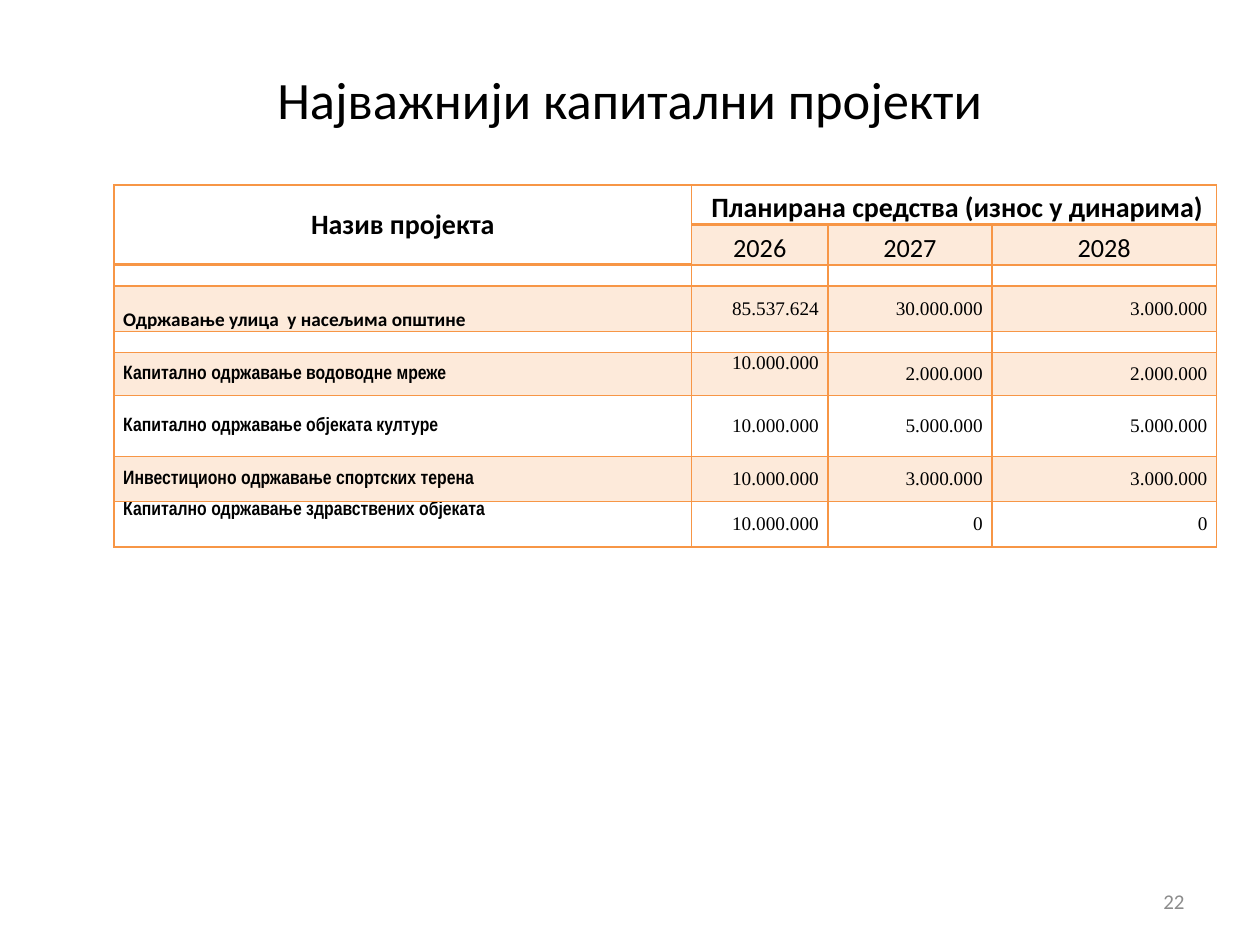
import pptx
import pptx.util
import pptx.dml.color
import pptx.enum.text
import lxml.etree
import pptx.oxml.ns

Pt = pptx.util.Pt
ALIGN = pptx.enum.text.PP_ALIGN
ANCHOR = pptx.enum.text.MSO_ANCHOR
qn = pptx.oxml.ns.qn

# Content
TITLE = "Најважнији капитални пројекти"
PAGE = "22"
HEADING = "Назив пројекта"
GROUP = " Планирана средства (износ у динарима)"
YEARS = ["2026", "2027", "2028"]
ROWS = [
    [HEADING, GROUP],
    [""] + YEARS,
    [],
    ["Одржавање улица  у насељима општине", "85.537.624", "30.000.000", "3.000.000"],
    [],
    ["Капитално одржавање водоводне мреже", "10.000.000", "2.000.000", "2.000.000"],
    ["Капитално одржавање објеката културе", "10.000.000", "5.000.000", "5.000.000"],
    ["Инвестиционо одржавање спортских терена", "10.000.000", "3.000.000", "3.000.000"],
    ["Капитално одржавање здравствених објеката", "10.000.000", "0", "0"],
]

# Layout and formats
COLS = [330, 78, 93.6, 128.4]
HEIGHTS = [22.9, 22.9, 12, 26.2, 12, 24.6, 34.8, 25.8, 25.8]
COLORS = {"text": "000000", "accent": "F79646", "page": "8C8C8C"}
SHADED = {(1, 1), (1, 2), (1, 3)} | {(r, c) for r in (3, 5, 7) for c in range(4)}
ANCHORS = {(0, 1): ANCHOR.BOTTOM, (3, 0): ANCHOR.BOTTOM,
           (5, 1): ANCHOR.TOP, (8, 0): ANCHOR.TOP}
ANCHORS.update({(1, c): ANCHOR.BOTTOM for c in (1, 2, 3)})
HEAD = {"size": Pt(16), "name": "Calibri", "bold": True}
YEAR = {"size": Pt(15), "name": "Calibri", "bold": False}
STREET = {"size": Pt(11), "name": "Calibri", "bold": True}
NAME = {"size": Pt(11), "name": "Arial Narrow", "bold": True}
AMOUNT = {"size": Pt(11), "name": "Times New Roman", "bold": False}


def write(tf, text, font, align, color="text"):
    p = tf.paragraphs[0]
    p.alignment = align
    r = p.add_run()
    r.text = text
    for key, value in font.items():
        setattr(r.font, key, value)
    r.font.color.rgb = pptx.dml.color.RGBColor.from_string(COLORS[color])


def add_text(s, box, text, font, align, color="text"):
    tf = s.shapes.add_textbox(*map(Pt, box)).text_frame
    tf.word_wrap = True
    tf.vertical_anchor = ANCHOR.MIDDLE
    write(tf, text, font, align, color)


def accent_fill(parent):
    fill = lxml.etree.SubElement(parent, qn("a:solidFill"))
    return lxml.etree.SubElement(fill, qn("a:srgbClr"), val=COLORS["accent"])


def cell_format(row, col):
    if row == 0:
        return HEAD, ALIGN.CENTER
    if row == 1:
        return YEAR, ALIGN.CENTER
    if col:
        return AMOUNT, ALIGN.RIGHT
    return (STREET if row == 3 else NAME), ALIGN.LEFT


def style_cell(cell, row, col):
    for key, value in {"margin_left": Pt(5.2), "margin_right": Pt(5.2),
                       "margin_top": 0, "margin_bottom": 0,
                       "vertical_anchor": ANCHORS.get((row, col), ANCHOR.MIDDLE)}.items():
        setattr(cell, key, value)
    tc_pr = cell._tc.get_or_add_tcPr()
    header_end = (row == 0 and col > 0) or (row < 2 and col == 0)
    for side in "LRTB":
        width = Pt(2) if side == "B" and header_end else Pt(1)
        accent_fill(lxml.etree.SubElement(tc_pr, qn("a:ln" + side), w=str(int(width))))
    if (row, col) in SHADED:
        lxml.etree.SubElement(accent_fill(tc_pr), qn("a:alpha"), val="20000")
    else:
        cell.fill.background()


prs = pptx.Presentation()
prs.slide_width, prs.slide_height = Pt(720), Pt(540)
s = prs.slides.add_slide(prs.slide_layouts[6])

# Project table
table = s.shapes.add_table(len(ROWS), len(COLS), Pt(65.2), Pt(105.6),
                           Pt(sum(COLS)), Pt(sum(HEIGHTS))).table
table.first_row = table.horz_banding = False
for column, width in zip(table.columns, COLS):
    column.width = Pt(width)
for row, height in enumerate(HEIGHTS):
    table.rows[row].height = Pt(height)
    for col in range(len(COLS)):
        cell = table.cell(row, col)
        style_cell(cell, row, col)
        text = ROWS[row][col] if col < len(ROWS[row]) else ""
        if text:
            write(cell.text_frame, text, *cell_format(row, col))
        else:
            cell.text_frame.paragraphs[0]._p.get_or_add_endParaRPr().set("sz", "800")
table.cell(0, 0).merge(table.cell(1, 0))
table.cell(0, 1).merge(table.cell(0, 3))

# Title and page number
add_text(s, (36, 21.6, 648, 69.1), TITLE, {"size": Pt(30), "name": "Calibri"}, ALIGN.CENTER)
add_text(s, (516, 500.5, 168, 28.8), PAGE, {"size": Pt(12), "name": "Calibri"},
         ALIGN.RIGHT, "page")

prs.save("out.pptx")
